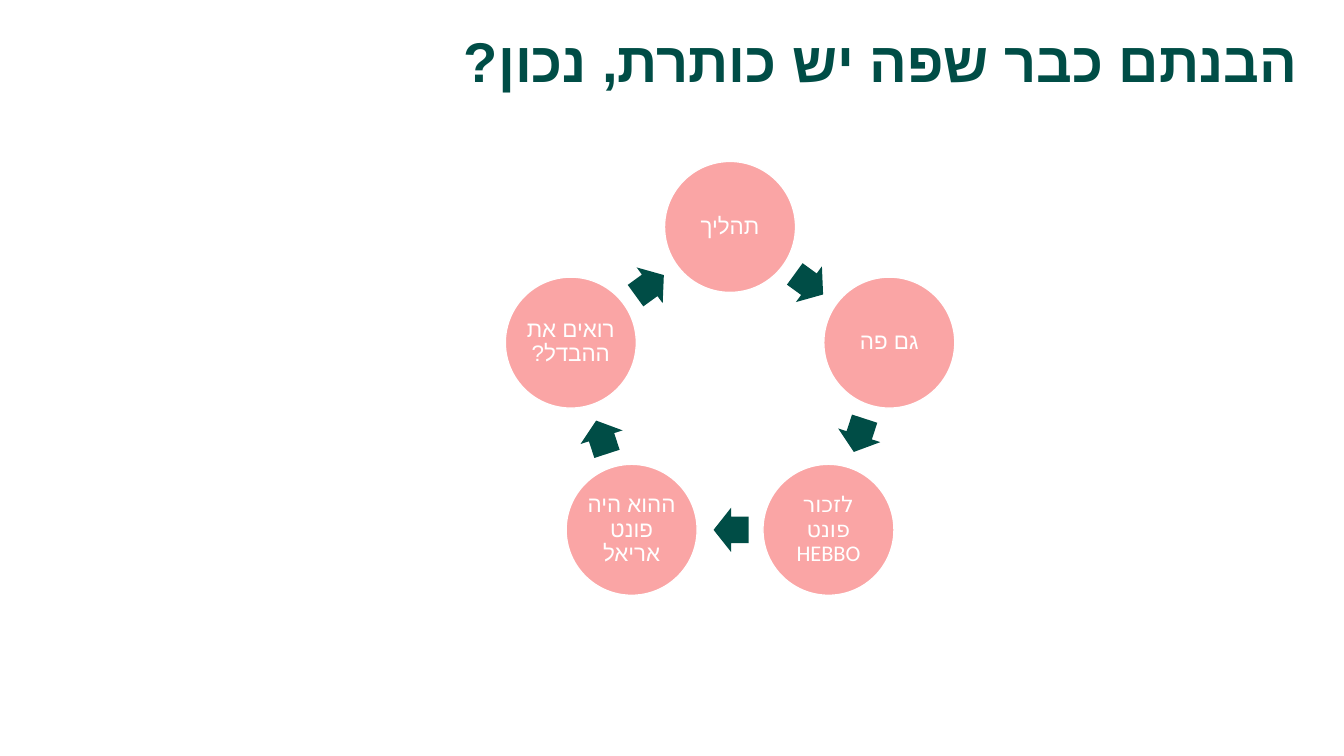
from math import cos, radians, sin

from lxml import etree
from pptx import Presentation
from pptx.dml.color import RGBColor
from pptx.enum.lang import MSO_LANGUAGE_ID
from pptx.enum.shapes import MSO_SHAPE
from pptx.enum.text import MSO_ANCHOR, PP_ALIGN
from pptx.oxml.ns import qn
from pptx.util import Pt

OVAL = MSO_SHAPE.OVAL
ARROW = MSO_SHAPE.RIGHT_ARROW
TOP, MIDDLE = MSO_ANCHOR.TOP, MSO_ANCHOR.MIDDLE
RIGHT, CENTER = PP_ALIGN.RIGHT, PP_ALIGN.CENTER
HEBREW = MSO_LANGUAGE_ID.HEBREW

COLORS = {"green": "004D46", "pink": "FAA5A5", "white": "FFFFFF"}
HEBREW_FONTS = {"Lato": "Arial", "Calibri": "Calibri"}

STEPS = [
    ("תהליך", "Lato"),
    ("גם פה", "Lato"),
    ("לזכור פונט HEBBO", "Calibri"),
    ("ההוא היה פונט אריאל", "Lato"),
    ("רואים את ההבדל?", "Lato"),
]
CENTER_X, CENTER_Y, RADIUS = 521.5, 281.7, 119.6
DIAMETER = 93.6
ARROW_WIDTH, ARROW_HEIGHT, ARROW_SETBACK = 25, 31.6, 0.7


def write_hebrew(shape, text, align, anchor, inset, formats, color):
    """Fill a shape with one right-to-left paragraph."""
    frame = shape.text_frame
    frame.word_wrap = True
    frame.vertical_anchor = anchor
    horizontal, vertical = inset
    frame.margin_left = frame.margin_right = Pt(horizontal)
    frame.margin_top = frame.margin_bottom = Pt(vertical)
    paragraph = frame.paragraphs[0]
    paragraph.alignment = align
    paragraph.line_spacing = 0.9
    paragraph._p.get_or_add_pPr().set("rtl", "1")
    run = paragraph.add_run()
    run.text = text
    for name, value in formats.items():
        setattr(run.font, name, value)
    run.font.color.rgb = RGBColor.from_string(COLORS[color])
    complex_font = etree.SubElement(run._r.get_or_add_rPr(), qn("a:cs"))
    complex_font.set("typeface", HEBREW_FONTS[formats["name"]])


def add_centered(kind, x, y, width, height, color):
    """Add a filled preset shape around a centre point."""
    shape = slide.shapes.add_shape(
        kind, Pt(x - width / 2), Pt(y - height / 2), Pt(width), Pt(height))
    shape.shadow.inherit = False
    shape.fill.solid()
    shape.fill.fore_color.rgb = RGBColor.from_string(COLORS[color])
    shape.line.fill.background()
    return shape


presentation = Presentation()
presentation.slide_width, presentation.slide_height = Pt(960), Pt(540)
slide = presentation.slides.add_slide(presentation.slide_layouts[6])

title = slide.shapes.add_textbox(Pt(109.4), Pt(20.9), Pt(824.4), Pt(104.4))
write_hebrew(title, "הבנתם כבר שפה יש כותרת, נכון?", RIGHT, TOP, (7.2, 3.6),
             {"name": "Lato", "size": Pt(40), "bold": True, "language_id": HEBREW},
             "green")

step_angle = 360 / len(STEPS)
arrow_radius = RADIUS * cos(radians(step_angle / 2))

for index, (label, font_name) in enumerate(STEPS):
    angle = radians(index * step_angle)
    circle = add_centered(OVAL, CENTER_X + RADIUS * sin(angle),
                          CENTER_Y - RADIUS * cos(angle), DIAMETER, DIAMETER, "pink")
    circle.line.color.rgb = RGBColor.from_string(COLORS["white"])
    circle.line.width = Pt(1)
    write_hebrew(circle, label, CENTER, MIDDLE, (0, 1.5),
                 {"name": font_name, "size": Pt(16), "language_id": HEBREW}, "white")

    heading = (index + 0.5) * step_angle
    angle = radians(heading)
    arrow = add_centered(
        ARROW,
        CENTER_X + arrow_radius * sin(angle) - ARROW_SETBACK * cos(angle),
        CENTER_Y - arrow_radius * cos(angle) - ARROW_SETBACK * sin(angle),
        ARROW_WIDTH, ARROW_HEIGHT, "green")
    arrow.rotation = heading
    arrow.adjustments[0], arrow.adjustments[1] = 0.6, 0.5

presentation.save("out.pptx")
